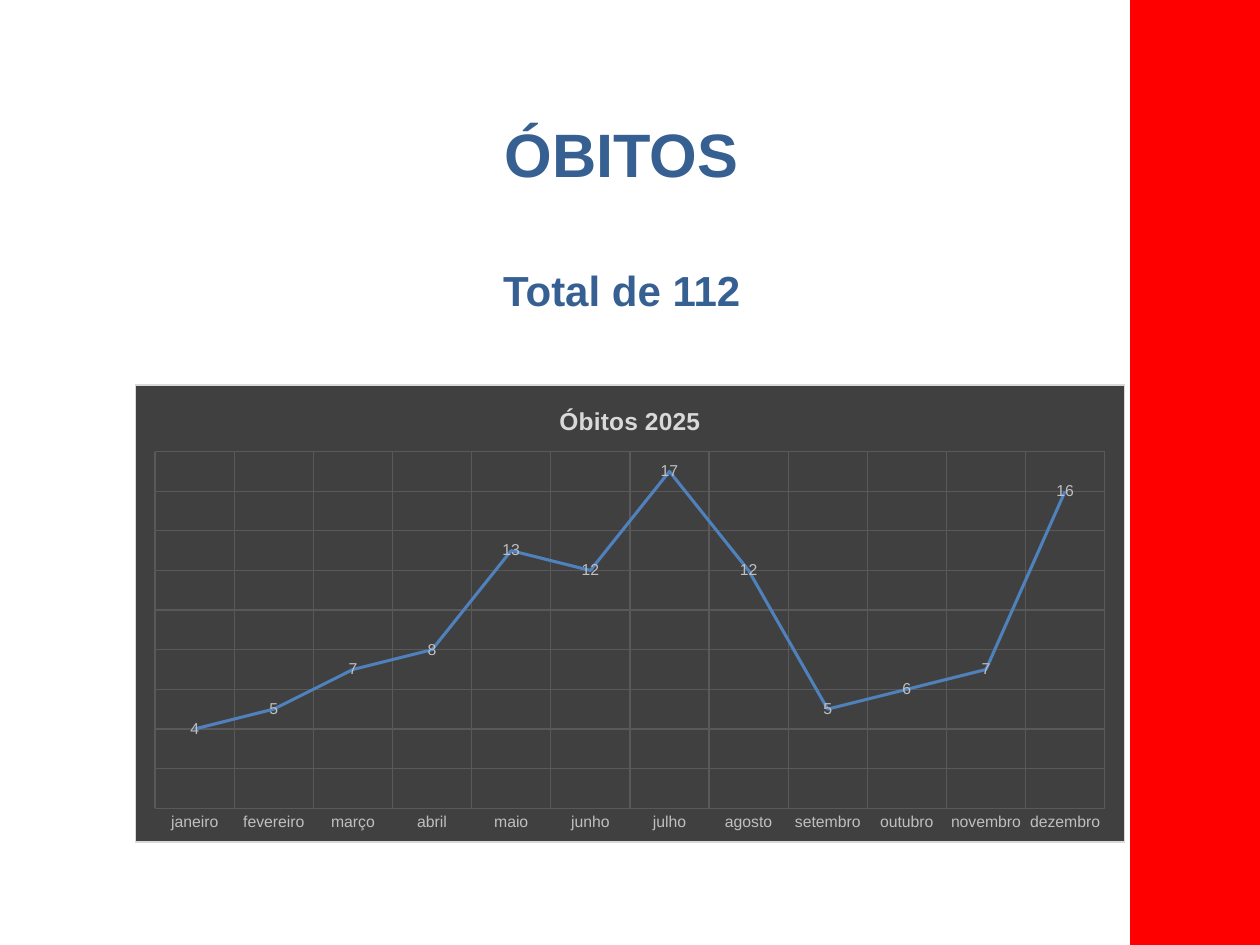
from lxml import etree
from pptx import Presentation
from pptx.chart.data import CategoryChartData
from pptx.dml.color import RGBColor
from pptx.enum.chart import XL_CHART_TYPE as ChartType, XL_LABEL_POSITION as LabelPos
from pptx.enum.chart import XL_MARKER_STYLE as Marker, XL_TICK_LABEL_POSITION as TickPos
from pptx.enum.chart import XL_TICK_MARK as Tick
from pptx.enum.shapes import MSO_SHAPE as Shape
from pptx.enum.text import MSO_ANCHOR as Anchor, PP_ALIGN as Align
from pptx.oxml import parse_xml
from pptx.oxml.ns import nsdecls
from pptx.util import Pt

COLORS = {
    "bar": "FF0000", "heading": "376092", "panel": "404040", "border": "D9D9D9",
    "grid": "595959", "label": "BFBFBF", "line": "4F81BD",
}
MONTHS = ["janeiro", "fevereiro", "março", "abril", "maio", "junho", "julho",
          "agosto", "setembro", "outubro", "novembro", "dezembro"]
DEATHS = [4, 5, 7, 8, 13, 12, 17, 12, 5, 6, 7, 16]


class SlideBuilder:
    font_name = "Arial"

    def __init__(self, slide):
        self.s = slide

    def color(self, key):
        return RGBColor.from_string(COLORS[key])

    def font(self, font, size, color, bold=False):
        font.name, font.size, font.bold = self.font_name, Pt(size), bold
        font.color.rgb = self.color(color)

    def stroke(self, line, color, width):
        line.color.rgb = self.color(color)
        line.width = Pt(width)

    def bar(self, x, y, w, h, color):
        sp = self.s.shapes.add_shape(Shape.RECTANGLE, Pt(x), Pt(y), Pt(w), Pt(h))
        sp.shadow.inherit = False
        sp.fill.solid()
        sp.fill.fore_color.rgb = self.color(color)
        self.stroke(sp.line, color, 2)

    def title(self, x, y, w, h, lines, gap):
        """Fill the title placeholder with (text, size) lines."""
        sp = self.s.shapes.title
        sp.left, sp.top, sp.width, sp.height = Pt(x), Pt(y), Pt(w), Pt(h)
        tf = sp.text_frame
        tf.word_wrap = True
        tf.vertical_anchor = Anchor.TOP
        tf.margin_top = Pt(8)
        tf.text = "\n".join(text for text, _ in lines)
        for i, (p, (_, size)) in enumerate(zip(tf.paragraphs, lines)):
            p.alignment = Align.CENTER
            p.space_before = Pt(gap if i else 0)
            for r in p.runs:
                self.font(r.font, size, "heading", bold=True)

    def line_chart(self, x, y, w, h, title, cats, values):
        data = CategoryChartData()
        data.categories = cats
        data.add_series(title, values)
        chart = self.s.shapes.add_chart(
            ChartType.LINE, Pt(x), Pt(y), Pt(w), Pt(h), data).chart
        self.font(chart.font, 10, "label")
        chart.has_legend = False
        chart.has_title = True
        tf = chart.chart_title.text_frame
        tf.text = title
        self.font(tf.paragraphs[0].runs[0].font, 14, "border", bold=True)
        chart.chart_title.include_in_layout = False

        # Axes and grid
        cat, val = chart.category_axis, chart.value_axis
        for axis in (cat, val):
            axis.has_major_gridlines = True
            self.stroke(axis.major_gridlines.format.line, "grid", 0.75)
            axis.major_tick_mark = axis.minor_tick_mark = Tick.NONE
            axis.format.line.fill.background()
        self.font(cat.tick_labels.font, 9, "label")
        val.minimum_scale, val.maximum_scale, val.major_unit = 0, 18, 2
        val.tick_label_position = TickPos.NONE
        val.visible = False

        # Series and labels
        plot = chart.plots[0]
        plot.vary_by_categories = False
        series = plot.series[0]
        series.smooth = False
        series.marker.style = Marker.NONE
        self.stroke(series.format.line, "line", 1.75)
        labels = series.data_labels
        labels.show_value = True
        labels.position = LabelPos.CENTER
        self.font(labels.font, 9, "label")

        self.chart_area(chart, 0.02, 0.146, 0.96, 0.78)

    def chart_area(self, chart, x, y, w, h):
        """Place the inner plot by fractions and colour the panel."""
        root = chart.element.find("{*}chart")
        area = root.find("{*}plotArea")
        for old in area.findall("{*}layout"):
            area.remove(old)
        layout = parse_xml(f'<c:layout {nsdecls("c")}><c:manualLayout/></c:layout>')
        settings = [("layoutTarget", "inner"), ("xMode", "edge"), ("yMode", "edge"),
                    ("x", x), ("y", y), ("w", w), ("h", h)]
        ns = etree.QName(layout).namespace
        for tag, value in settings:
            etree.SubElement(layout[0], f"{{{ns}}}{tag}").set("val", str(value))
        area.insert(0, layout)
        root.addnext(parse_xml(
            f'<c:spPr {nsdecls("c", "a")}>'
            f'<a:solidFill><a:srgbClr val="{COLORS["panel"]}"/></a:solidFill>'
            f'<a:ln w="{Pt(0.75)}"><a:solidFill><a:srgbClr val="{COLORS["border"]}"/>'
            '</a:solidFill></a:ln></c:spPr>'))


def main():
    prs = Presentation()
    prs.slide_width, prs.slide_height = Pt(720), Pt(540)
    b = SlideBuilder(prs.slides.add_slide(prs.slide_layouts[5]))

    # Side bar
    b.bar(646.6, 0, 73.4, 540, "bar")
    # Heading and total
    b.title(141.8, 58.3, 427, 121, [("ÓBITOS", 35), ("Total de 112", 24)], gap=43)
    # Monthly deaths
    b.line_chart(77, 219.6, 566, 262, "Óbitos 2025", MONTHS, DEATHS)

    prs.save("out.pptx")


if __name__ == "__main__":
    main()
